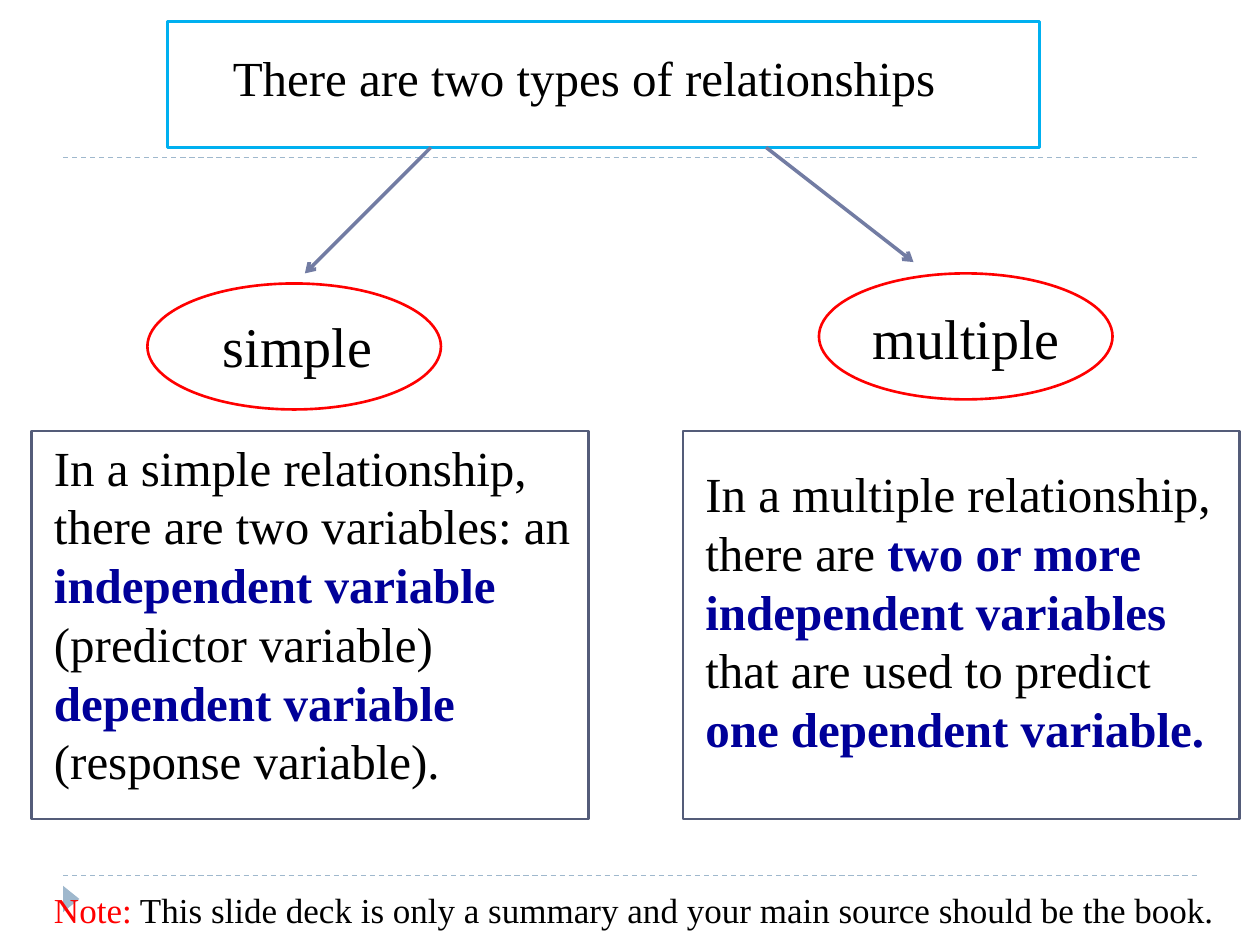
"""Build the slide on simple and multiple relationships."""
from lxml import etree
from pptx import Presentation
from pptx import util as u
from pptx.dml.color import RGBColor
from pptx.enum import dml, shapes
from pptx.oxml.ns import qn

HUES = {"white": "FFFFFF", "black": "000000", "red": "FF0000", "navy": "000099",
        "sky": "00B0F0", "slate": "545C79", "arrow": "727CA3", "pale": "9FB8CD"}

deck = Presentation()
deck.slide_width, deck.slide_height = u.Inches(10), u.Inches(7.5)
slide = deck.slides.add_slide(deck.slide_layouts[6])


def draw(kind, spot, fill, edge=None):
    item = slide.shapes.add_shape(kind, *map(u.Inches, spot))
    item.shadow.inherit = False
    item.fill.solid()
    item.fill.fore_color.rgb = RGBColor.from_string(HUES[fill])
    if edge:
        item.line.color.rgb = RGBColor.from_string(HUES[edge])
        item.line.width = u.Pt(1.5)
    else:
        item.line.fill.background()
    return item


def join(start, end, hue, width):
    line = slide.shapes.add_connector(shapes.MSO_CONNECTOR.STRAIGHT,
                                      *map(u.Inches, start + end))
    line.line.color.rgb = RGBColor.from_string(HUES[hue])
    line.line.width = u.Pt(width)
    etree.SubElement(line._element.spPr, qn("a:effectLst"))
    return line


for y in (6.95, 1.25):
    join((0.5, y), (9.5, y), "pale", 0.75).line.dash_style = dml.MSO_LINE.DASH
mark = draw(shapes.MSO_SHAPE.ISOSCELES_TRIANGLE, (0.46, 7.07, 0.21, 0.13), "pale")
mark.rotation = 90

rect, oval = shapes.MSO_SHAPE.RECTANGLE, shapes.MSO_SHAPE.OVAL
frames = [
    (rect, (1.33, 0.17, 6.92, 1), "sky"),
    (oval, (1.17, 2.25, 2.33, 1), "red"),
    (oval, (6.5, 2.17, 2.33, 1), "red"),
    (rect, (0.25, 3.42, 4.42, 3.08), "slate"),
    (rect, (5.42, 3.42, 4.42, 3.08), "slate"),
]
for kind, spot, edge in frames:
    draw(kind, spot, "white", edge)

for start, end in [((3.42, 1.17), (2.42, 2.17)), ((6.08, 1.17), (7.25, 2.08))]:
    arrow = join(start, end, "arrow", 2)
    etree.SubElement(arrow.line._get_or_add_ln(), qn("a:tailEnd"), type="arrow")

texts = [
    ((1.75, 0.33, 6, 0.57), 28, [[("There are two types of relationships", "black")]]),
    ((1.67, 2.42, 1.4, 0.64), 32, [[("simple", "black")]]),
    ((6.83, 2.36, 1.75, 0.64), 32, [[("multiple", "black")]]),
    ((0.33, 3.42, 4.42, 2.93), 28, [
        [("In a simple relationship, there are two variables: an", "black")],
        [("independent variable ", "navy"), ("(predictor variable)", "black")],
        [("dependent variable ", "navy"), ("(response variable).", "black")]]),
    ((5.5, 3.63, 4.33, 2.46), 28, [
        [("In a multiple relationship, there are ", "black"),
         ("two or more independent variables ", "navy"),
         ("that are used to predict ", "black"),
         ("one dependent variable.", "navy")]]),
    ((0.33, 7, 9.75, 0.44), 20, [
        [("Note:", "red"),
         (" This slide deck is only a summary and your main source should be the book.",
          "black")]]),
]
for spot, size, paras in texts:
    frame = slide.shapes.add_textbox(*map(u.Inches, spot)).text_frame
    frame.word_wrap = True
    frame.text = "\n".join("" for _ in paras)
    for para, runs in zip(frame.paragraphs, paras):
        para.line_spacing = u.Pt(size * 1.2)
        for words, hue in runs:
            run = para.add_run()
            run.text = words
            run.font.name = "Times New Roman"
            run.font.size = u.Pt(size)
            run.font.bold = hue == "navy"
            run.font.color.rgb = RGBColor.from_string(HUES[hue])

deck.save("out.pptx")
